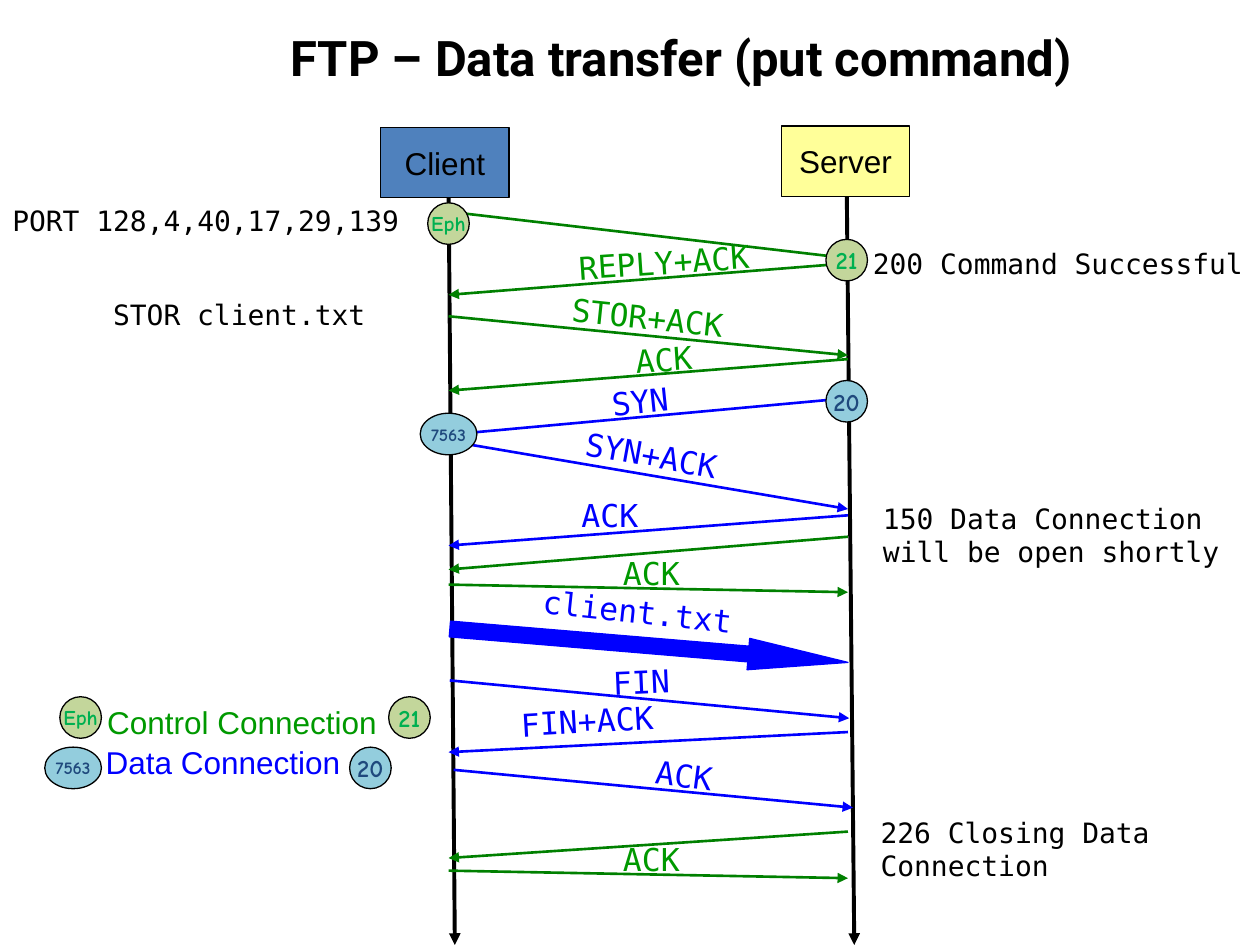
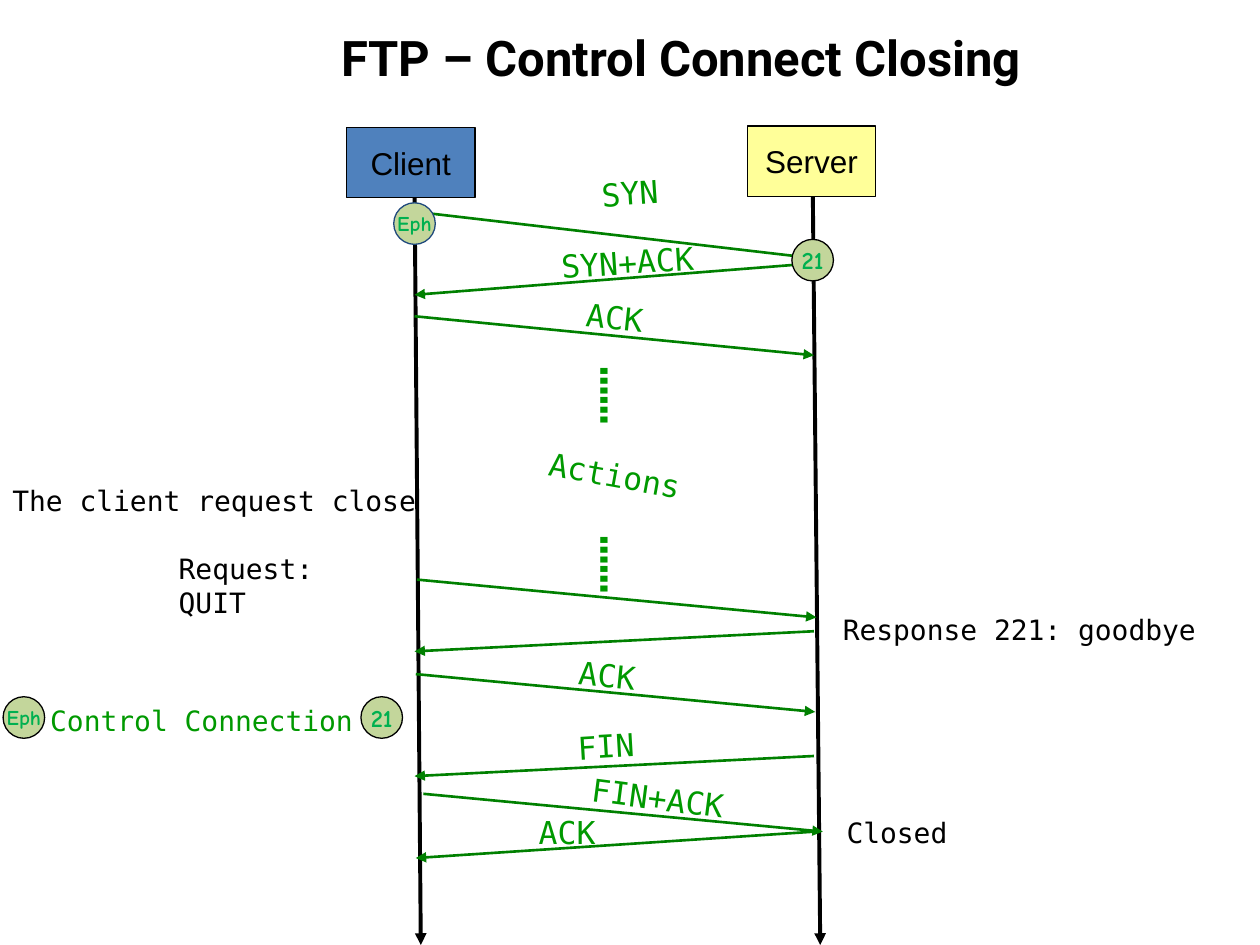
from lxml.etree import SubElement
from pptx import Presentation
from pptx.dml.color import RGBColor
from pptx.enum.shapes import MSO_CONNECTOR, MSO_SHAPE
from pptx.enum.text import MSO_ANCHOR, MSO_AUTO_SIZE, PP_ALIGN
from pptx.oxml.ns import qn
from pptx.util import Inches, Pt

# Shared look
MONO, SANS, BADGE_FONT, TITLE_FONT = "DejaVu Sans Mono", "Arial", "Comic Neue", "Roboto"
BLACK, BLUE, GREEN, LINE_GREEN = "000000", "0000FF", "009900", "008000"
CLIENT_FILL, SERVER_FILL, NAVY = "4F81BD", "FFFF99", "1F497D"
LANE_GAP = 3.17

# Port badges: width, text size, fill, text colour
PORTS = {
    "Eph": (0.33, 12, "C3D69B", "00B050"),
    "21": (0.33, 14, "C3D69B", "00B050"),
    "7563": (0.45, 10, "93CDDD", NAVY),
    "20": (0.33, 14, "93CDDD", NAVY),
}

# Messages: sender, start y, end y, colour, shift to the right
TRANSFER_MESSAGES = [
    ("client", 1.68, 2.05, LINE_GREEN, 0),
    ("server", 2.09, 2.34, LINE_GREEN, 0),
    ("client", 2.51, 2.82, LINE_GREEN, 0),
    ("server", 2.85, 3.10, LINE_GREEN, 0),
    ("server", 3.16, 3.45, BLUE, 0),
    ("client", 3.50, 4.04, BLUE, 0),
    ("server", 4.09, 4.33, BLUE, 0),
    ("server", 4.26, 4.52, LINE_GREEN, 0),
    ("client", 4.64, 4.70, LINE_GREEN, 0),
    ("client", 5.40, 5.70, BLUE, 0.01),
    ("server", 5.81, 5.97, BLUE, 0),
    ("client", 6.11, 6.41, BLUE, 0.04),
    ("server", 6.60, 6.81, LINE_GREEN, 0),
    ("client", 6.91, 6.97, LINE_GREEN, 0),
]
CLOSING_MESSAGES = [
    ("client", 1.68, 2.05, LINE_GREEN, 0),
    ("server", 2.09, 2.34, LINE_GREEN, 0),
    ("client", 2.51, 2.82, LINE_GREEN, 0),
    ("client", 4.60, 4.90, LINE_GREEN, 0.02),
    ("server", 5.01, 5.17, LINE_GREEN, 0),
    ("client", 5.35, 5.65, LINE_GREEN, 0.01),
    ("server", 6.00, 6.16, LINE_GREEN, 0),
    ("client", 6.30, 6.60, LINE_GREEN, 0.07),
    ("server", 6.60, 6.81, LINE_GREEN, 0.01),
]

# Labels: text, centre x, centre y, rotation, colour
TRANSFER_LABELS = [
    ("REPLY+ACK", 5.27, 2.08, -3.9, GREEN),
    ("STOR+ACK", 5.14, 2.52, 6, GREEN),
    ("ACK", 5.27, 2.85, -3.9, GREEN),
    ("SYN", 5.08, 3.18, -5.9, BLUE),
    ("SYN+ACK", 5.17, 3.61, 10.4, BLUE),
    ("ACK", 4.84, 4.09, 0, BLUE),
    ("ACK", 5.17, 4.55, 0, GREEN),
    ("client.txt", 5.06, 4.85, 6, BLUE),
    ("FIN", 5.09, 5.41, -2.5, BLUE),
    ("FIN+ACK", 4.66, 5.72, -3.4, BLUE),
    ("ACK", 5.43, 6.15, 7.5, BLUE),
    ("ACK", 5.17, 6.82, 0, GREEN),
]
CLOSING_LABELS = [
    ("SYN", 5.0, 1.53, -3.9, GREEN),
    ("SYN+ACK", 4.98, 2.08, -3.9, GREEN),
    ("ACK", 4.88, 2.52, 6, GREEN),
    ("Actions", 4.88, 3.77, 10.4, GREEN),
    ("ACK", 4.82, 5.36, 5.8, GREEN),
    ("FIN", 4.81, 5.92, -3.4, GREEN),
    ("FIN+ACK", 5.22, 6.33, 7.5, GREEN),
    ("ACK", 4.5, 6.6, 0, GREEN),
]

# Notes: text, left, top, width, number of lines
TRANSFER_NOTES = [
    ("PORT 128,4,40,17,29,139", 0, 1.57, 3.43, 1),
    ("200 Command Successful", 6.83, 1.91, 3.66, 1),
    ("STOR client.txt", 0.8, 2.31, 2.64, 1),
    ("150 Data Connection will be open shortly", 6.91, 3.93, 3.36, 2),
    ("226 Closing Data Connection", 6.89, 6.42, 3.38, 2),
]
CLOSING_NOTES = [
    ("The client request close", 0, 3.79, 3.43, 1),
    ("Request: QUIT", 1.32, 4.33, 1.9, 2),
    ("Response 221: goodbye", 6.59, 4.81, 3.41, 1),
    ("Closed", 6.62, 6.42, 3.38, 1),
]


def color(hex_string):
    return RGBColor.from_string(hex_string)


def write(shape, text, font, size, text_color, bold=False, align=PP_ALIGN.CENTER,
          wrap=False, anchor=MSO_ANCHOR.TOP):
    text_frame = shape.text_frame
    text_frame.text = text
    text_frame.word_wrap = wrap
    text_frame.auto_size = MSO_AUTO_SIZE.NONE
    text_frame.vertical_anchor = anchor
    paragraph = text_frame.paragraphs[0]
    paragraph.alignment = align
    run_font = paragraph.runs[0].font
    run_font.name, run_font.size, run_font.bold = font, Pt(size), bold
    run_font.color.rgb = color(text_color)


def add_title(slide, text):
    title = slide.shapes.title
    title.left, title.top = Inches(1.55), Inches(0.17)
    title.width, title.height = Inches(7.71), Inches(0.57)
    write(title, text, TITLE_FONT, 28, BLACK, bold=True, wrap=True)


def add_arrow(slide, start, end, line_color, width=1.5):
    points = [Inches(value) for value in (*start, *end)]
    arrow = slide.shapes.add_connector(MSO_CONNECTOR.STRAIGHT, *points)
    arrow.line.color.rgb = color(line_color)
    arrow.line.width = Pt(width)
    SubElement(arrow.line._get_or_add_ln(), qn("a:tailEnd"), type="triangle")
    SubElement(arrow._element.spPr, qn("a:effectLst"))


def add_figure(slide, kind, center_x, top, width, height, fill, line=BLACK):
    shape = slide.shapes.add_shape(kind, Inches(center_x - width / 2), Inches(top),
                                   Inches(width), Inches(height))
    shape.shadow.inherit = False
    shape.fill.solid()
    shape.fill.fore_color.rgb = color(fill)
    shape.line.color.rgb = color(line)
    shape.line.width = Pt(0.75)
    return shape


def add_label(slide, text, center_x, center_y, rotation, text_color, font=MONO, size=18):
    width = len(text) * size / 120 + 0.2
    height = size / 60 + 0.1
    label = slide.shapes.add_textbox(Inches(center_x - width / 2), Inches(center_y - height / 2),
                                     Inches(width), Inches(height))
    label.rotation = rotation
    write(label, text, font, size, text_color)


def add_note(slide, text, left, top, width, lines):
    note = slide.shapes.add_textbox(Inches(left), Inches(top), Inches(width),
                                    Inches(0.1 + 0.27 * lines))
    write(note, text, MONO, 16, BLACK, align=PP_ALIGN.LEFT, wrap=True)


def add_badge(slide, port, center_x, top, line=BLACK):
    width, size, fill, text_color = PORTS[port]
    badge = add_figure(slide, MSO_SHAPE.OVAL, center_x, top, width, 0.33, fill, line)
    write(badge, port, BADGE_FONT, size, text_color, bold=True, anchor=MSO_ANCHOR.MIDDLE)


def add_participant(slide, name, center_x, top, fill):
    box = add_figure(slide, MSO_SHAPE.RECTANGLE, center_x, top, 1.02, 0.56, fill)
    write(box, name, SANS, 18, BLACK, anchor=MSO_ANCHOR.MIDDLE)


def add_sequence(presentation, title, client_x, messages, labels, notes, eph_line=BLACK):
    """Add a slide with two lifelines, the messages between them and their texts."""
    slide = presentation.slides.add_slide(presentation.slide_layouts[5])
    add_title(slide, title)
    server_x = client_x + LANE_GAP

    # Lifelines and messages
    add_arrow(slide, (client_x, 1.44), (client_x + 0.05, 7.5), BLACK, 2.25)
    add_arrow(slide, (server_x - 0.01, 1.44), (server_x + 0.05, 7.5), BLACK, 2.25)
    for sender, start_y, end_y, line_color, shift in messages:
        ends = [client_x + shift, server_x + shift]
        if sender == "server":
            ends.reverse()
        add_arrow(slide, (ends[0], start_y), (ends[1], end_y), line_color)

    # Texts
    for label in labels:
        add_label(slide, *label)
    for note in notes:
        add_note(slide, *note)

    # Participants and control ports
    add_participant(slide, "Client", client_x - 0.03, 1.01, CLIENT_FILL)
    add_participant(slide, "Server", server_x - 0.02, 1, SERVER_FILL)
    add_badge(slide, "Eph", client_x, 1.61, eph_line)
    add_badge(slide, "21", server_x - 0.01, 1.9)
    return slide


def add_legend(slide, text, center_x, center_y, text_color, badges, badge_top, font, size):
    add_label(slide, text, center_x, center_y, 0, text_color, font, size)
    for port, badge_x in badges:
        add_badge(slide, port, badge_x, badge_top)


def add_transfer_slide(presentation):
    slide = add_sequence(presentation, "FTP – Data transfer (put command)", 3.56,
                         TRANSFER_MESSAGES, TRANSFER_LABELS, TRANSFER_NOTES)
    # File transfer
    block_arrow = add_figure(slide, MSO_SHAPE.RIGHT_ARROW, 5.15, 5, LANE_GAP, 0.25, BLUE, BLUE)
    block_arrow.adjustments[1] = 3.17
    block_arrow.rotation = 4.8
    # Data ports
    add_badge(slide, "7563", 3.56, 3.28)
    add_badge(slide, "20", 6.72, 3.02)
    # Legend
    add_legend(slide, "Control Connection", 1.92, 5.73, GREEN,
               [("Eph", 0.64), ("21", 3.25)], 5.53, SANS, 18)
    add_legend(slide, "Data Connection", 1.77, 6.05, BLUE,
               [("7563", 0.58), ("20", 2.94)], 5.93, SANS, 18)


def add_closing_slide(presentation):
    slide = add_sequence(presentation, "FTP – Control Connect Closing", 3.29,
                         CLOSING_MESSAGES, CLOSING_LABELS, CLOSING_NOTES, eph_line=NAVY)
    # Dotted gaps around the actions
    for center_y in (3.14, 4.48):
        add_label(slide, "……", 4.92, center_y, 90, GREEN, size=28)
    # Legend
    add_legend(slide, "Control Connection", 1.6, 5.72, GREEN,
               [("Eph", 0.19), ("21", 3.03)], 5.53, MONO, 16)


def main():
    presentation = Presentation()
    presentation.slide_width, presentation.slide_height = Inches(10), Inches(7.5)
    add_transfer_slide(presentation)
    add_closing_slide(presentation)
    presentation.save("out.pptx")


if __name__ == "__main__":
    main()
